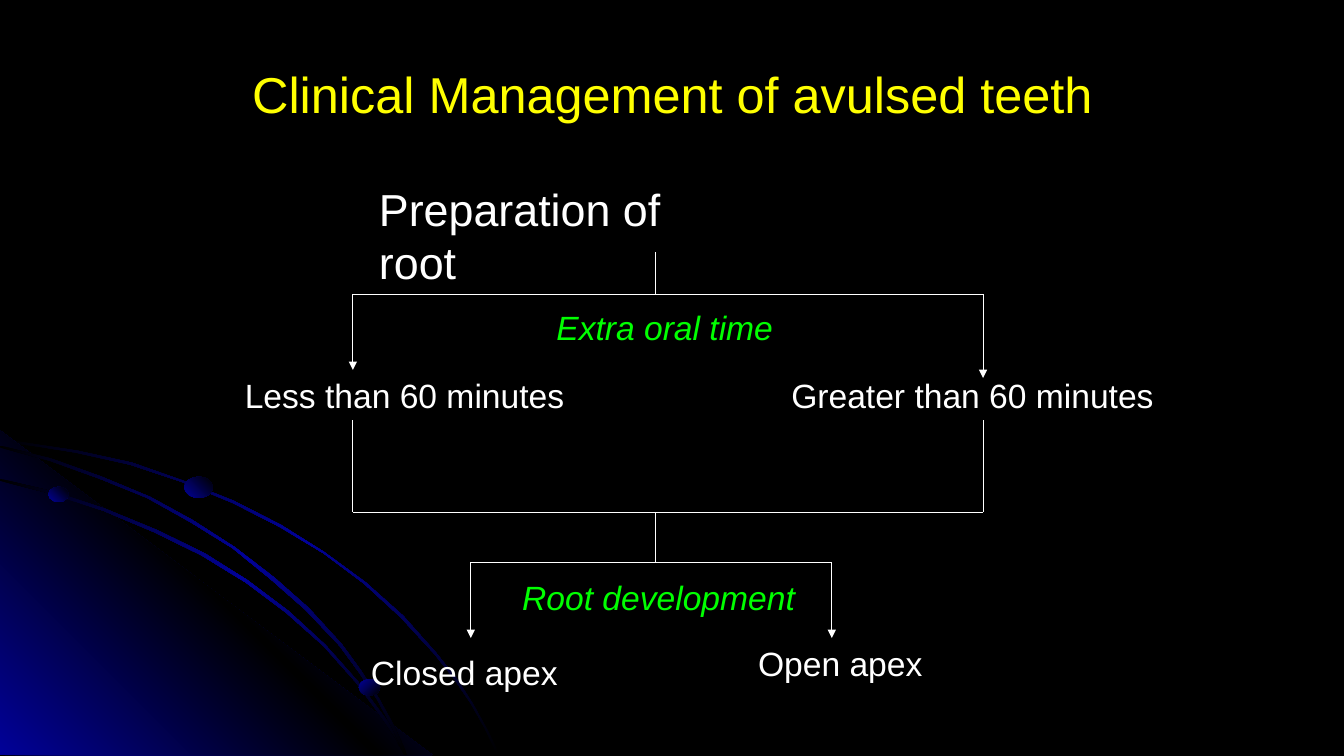
from lxml import etree
from pptx import Presentation
from pptx.dml.color import RGBColor
from pptx.enum.shapes import MSO_CONNECTOR, MSO_SHAPE
from pptx.enum.text import MSO_ANCHOR, PP_ALIGN
from pptx.oxml.ns import qn
from pptx.util import Inches, Pt

STRAIGHT = MSO_CONNECTOR.STRAIGHT
OVAL = MSO_SHAPE.OVAL
TOP, MIDDLE = MSO_ANCHOR.TOP, MSO_ANCHOR.MIDDLE
LEFT, CENTER = PP_ALIGN.LEFT, PP_ALIGN.CENTER
FONT = "Arial"
COLORS = {
    "background": "000000",
    "glow": "010199",
    "title": "FFFF00",
    "text": "FFFFFF",
    "criterion": "00FF00",
}
FADE_BOTH_ENDS = ("background", "glow", "background")
FADE_MIDDLE = ("glow", "background", "glow")
FADE_OUT = ("glow", "background")

OUTER_ARC = [
    (0.76, 4.47), (0.37, 4.41), (0, 4.35), (0, 4.38), (0.37, 4.43), (0.75, 4.49),
    (1.29, 4.61), (1.8, 4.78), (2.31, 4.99), (2.78, 5.23), (3.21, 5.49), (3.61, 5.79),
    (3.97, 6.12), (4.31, 6.49), (4.5, 6.73), (4.67, 6.98), (4.81, 7.23), (4.93, 7.49),
    (4.96, 7.49), (4.83, 7.23), (4.69, 6.98), (4.53, 6.73), (4.33, 6.48), (4, 6.11),
    (3.63, 5.78), (3.22, 5.48), (2.79, 5.21), (2.32, 4.97), (1.82, 4.77), (1.31, 4.59),
]
CORNER = [(4.29, 7.49), (0, 7.49), (0, 4.27)]
INNER_ARC = [
    (3.8, 7.14), (3.92, 7.32), (4.01, 7.49), (4.04, 7.49), (3.94, 7.3), (3.82, 7.12),
    (3.55, 6.76), (3.23, 6.4), (2.86, 6.06), (2.46, 5.76), (2.03, 5.49), (1.56, 5.26),
    (1.05, 5.05), (0.54, 4.88), (0, 4.75), (0, 4.77), (0.51, 4.9), (1.03, 5.07),
    (1.53, 5.28), (2, 5.51), (2.44, 5.78), (2.84, 6.08), (3.21, 6.41), (3.53, 6.77),
]
MIDDLE_ARC = [
    (0, 4.42), (0, 4.44), (0.49, 4.57), (0.99, 4.75), (1.46, 4.94), (1.89, 5.18),
    (2.31, 5.44), (2.69, 5.75), (3.03, 6.05), (3.37, 6.41), (3.56, 6.67), (3.74, 6.94),
    (3.89, 7.22), (4.01, 7.49), (4.04, 7.49), (3.91, 7.2), (3.76, 6.93), (3.58, 6.65),
    (3.39, 6.39), (3.06, 6.03), (2.72, 5.73), (2.33, 5.43), (1.91, 5.16), (1.49, 4.93),
    (1.01, 4.73), (0.51, 4.55),
]


def color(name):
    return RGBColor.from_string(COLORS[name])


def paint_gradient(shape, names, angle):
    shape.shadow.inherit = False
    shape.line.fill.background()
    shape.fill.gradient()
    shape.fill.gradient_angle = 360 - angle
    stops = shape.element.spPr.find(qn("a:gradFill")).find(qn("a:gsLst"))
    for stop in list(stops):
        stops.remove(stop)
    for index, name in enumerate(names):
        position = 100000 * index // (len(names) - 1)
        stop = etree.SubElement(stops, qn("a:gs"), pos=str(position))
        etree.SubElement(stop, qn("a:srgbClr"), val=COLORS[name])


def add_outline(slide, left, top, points, names, angle):
    places = [(Inches(left + x), Inches(top + y)) for x, y in points]
    builder = slide.shapes.build_freeform(*places[0])
    builder.add_line_segments(places[1:], close=True)
    paint_gradient(builder.convert_to_shape(), names, angle)


def add_text(slide, text, left, top, width, height, size=24, fill="text",
             italic=False, align=LEFT, anchor=TOP, wrap=False):
    box = slide.shapes.add_textbox(Inches(left), Inches(top), Inches(width), Inches(height))
    frame = box.text_frame
    frame.word_wrap = wrap
    frame.vertical_anchor = anchor
    paragraph = frame.paragraphs[0]
    paragraph.alignment = align
    run = paragraph.add_run()
    run.text = text
    run.font.name = FONT
    run.font.size = Pt(size)
    run.font.italic = italic
    run.font.color.rgb = color(fill)


def add_line(slide, start, end, arrow=False):
    line = slide.shapes.add_connector(STRAIGHT, *map(Inches, start + end))
    line.line.color.rgb = color("text")
    line.line.width = Pt(0.75)
    if arrow:
        etree.SubElement(line.line._get_or_add_ln(), qn("a:tailEnd"), type="triangle")
    etree.SubElement(line.element.spPr, qn("a:effectLst"))


def add_orbits(slide, left, top):
    add_outline(slide, left, top, OUTER_ARC, FADE_BOTH_ENDS, 45)
    add_outline(slide, left, top, CORNER, FADE_MIDDLE, 315)
    for arc in (INNER_ARC, MIDDLE_ARC):
        add_outline(slide, left, top, arc, FADE_BOTH_ENDS, 45)
    for x, y, width, height, angle in (
        (0.48, 4.83, 0.2, 0.15, 315),
        (3.56, 6.74, 0.21, 0.16, 45),
        (1.83, 4.73, 0.28, 0.21, 315),
    ):
        planet = slide.shapes.add_shape(
            OVAL, Inches(left + x), Inches(top + y), Inches(width), Inches(height))
        paint_gradient(planet, FADE_OUT, angle)


def add_heading(slide, left, top, width, height):
    add_text(slide, "Clinical Management of avulsed teeth", left, top, width, height,
             size=36, fill="title", align=CENTER, anchor=MIDDLE, wrap=True)


def add_split(slide, left, top, width, stem_x, stem, left_drop, right_drop):
    right = left + width
    add_line(slide, (stem_x, top - stem), (stem_x, top))
    add_line(slide, (left, top), (right, top))
    add_line(slide, (left, top), (left, top + left_drop), arrow=True)
    add_line(slide, (right, top), (right, top + right_drop), arrow=True)


def add_merge(slide, left, top, width, height):
    for x in (left, left + width):
        add_line(slide, (x, top), (x, top + height))
    add_line(slide, (left, top + height), (left + width, top + height))


def add_decision_tree(slide, left, top):
    stem_x = left + 4.17
    add_text(slide, "Preparation of root", left + 1.33, top, 3.88, 0.6, size=32)
    add_split(slide, left + 1.17, top + 1.17, 6.25, stem_x, 0.42, 0.75, 0.83)
    add_merge(slide, left + 1.17, top + 2.42, 6.25, 0.91)
    add_split(slide, left + 2.34, top + 3.83, 3.58, stem_x, 0.5, 0.75, 0.75)
    for text, x, y, width, style in (
        ("Extra oral time", 3.09, 1.25, 2.44, {"fill": "criterion", "italic": True}),
        ("Less than 60 minutes", 0, 1.92, 3.37, {}),
        ("Greater than 60 minutes", 5.42, 1.92, 3.8, {}),
        ("Root development", 2.75, 3.92, 2.91, {"fill": "criterion", "italic": True}),
        ("Closed apex", 1.25, 4.67, 2.06, {}),
        ("Open apex", 5.09, 4.58, 1.83, {}),
    ):
        add_text(slide, text, left + x, top + y, width, 0.5, **style)


def main():
    presentation = Presentation()
    presentation.slide_width = Inches(13.33)
    presentation.slide_height = Inches(7.5)
    slide = presentation.slides.add_slide(presentation.slide_layouts[6])
    slide.background.fill.solid()
    slide.background.fill.fore_color.rgb = color("background")
    add_orbits(slide, 0, 0)
    add_heading(slide, 0.67, 0.3, 12, 1.25)
    add_decision_tree(slide, 2.33, 1.75)
    presentation.save("out.pptx")


if __name__ == "__main__":
    main()
